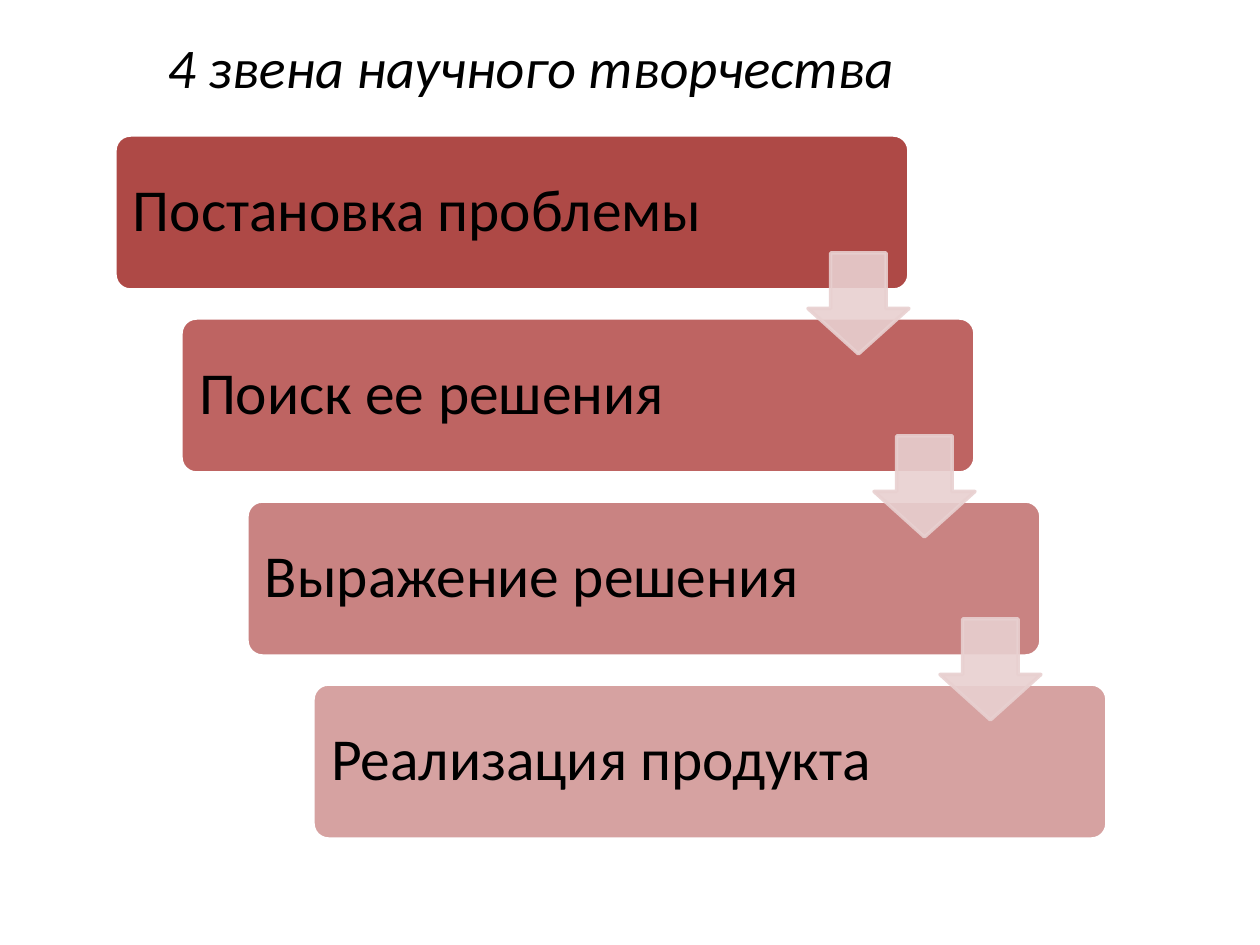
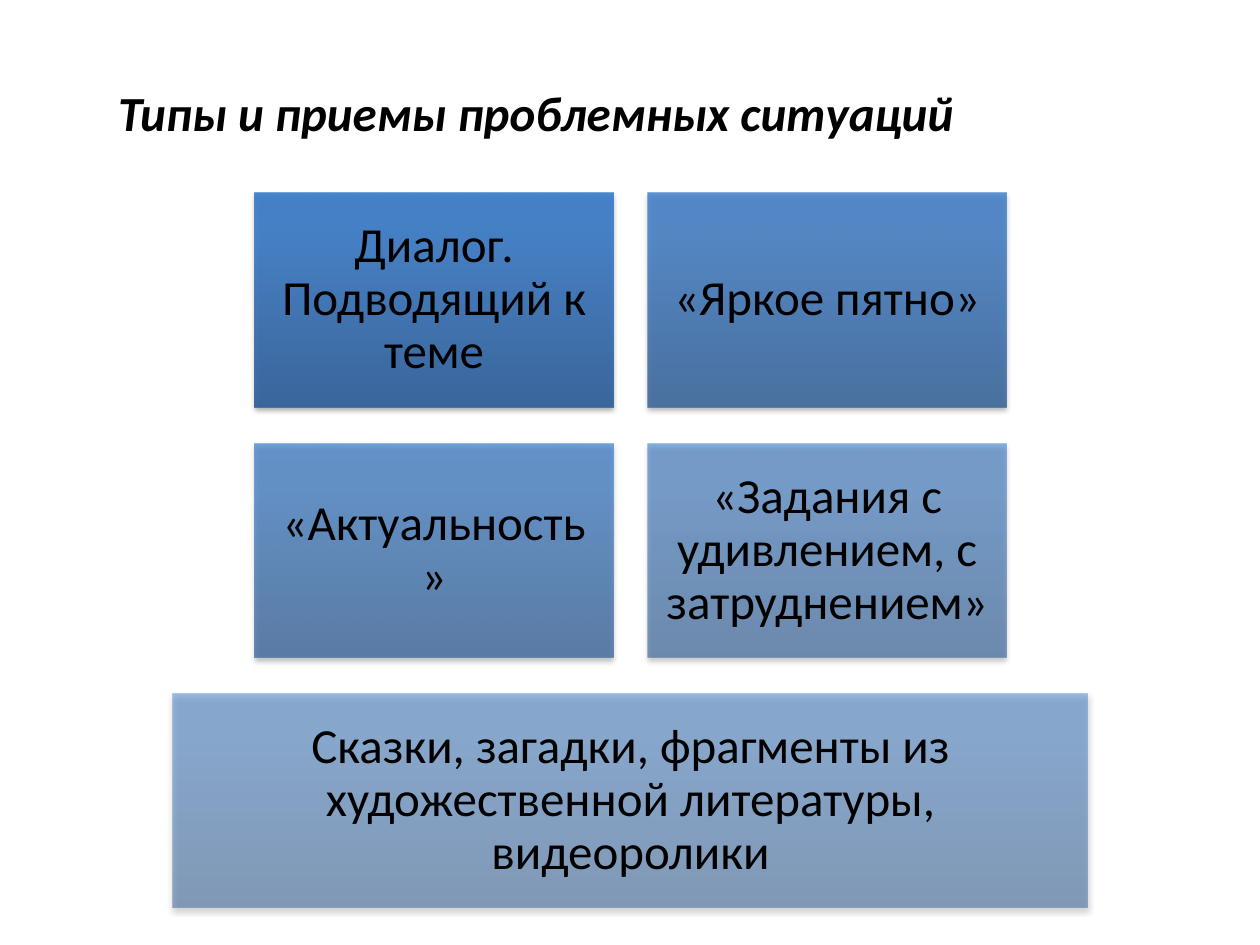
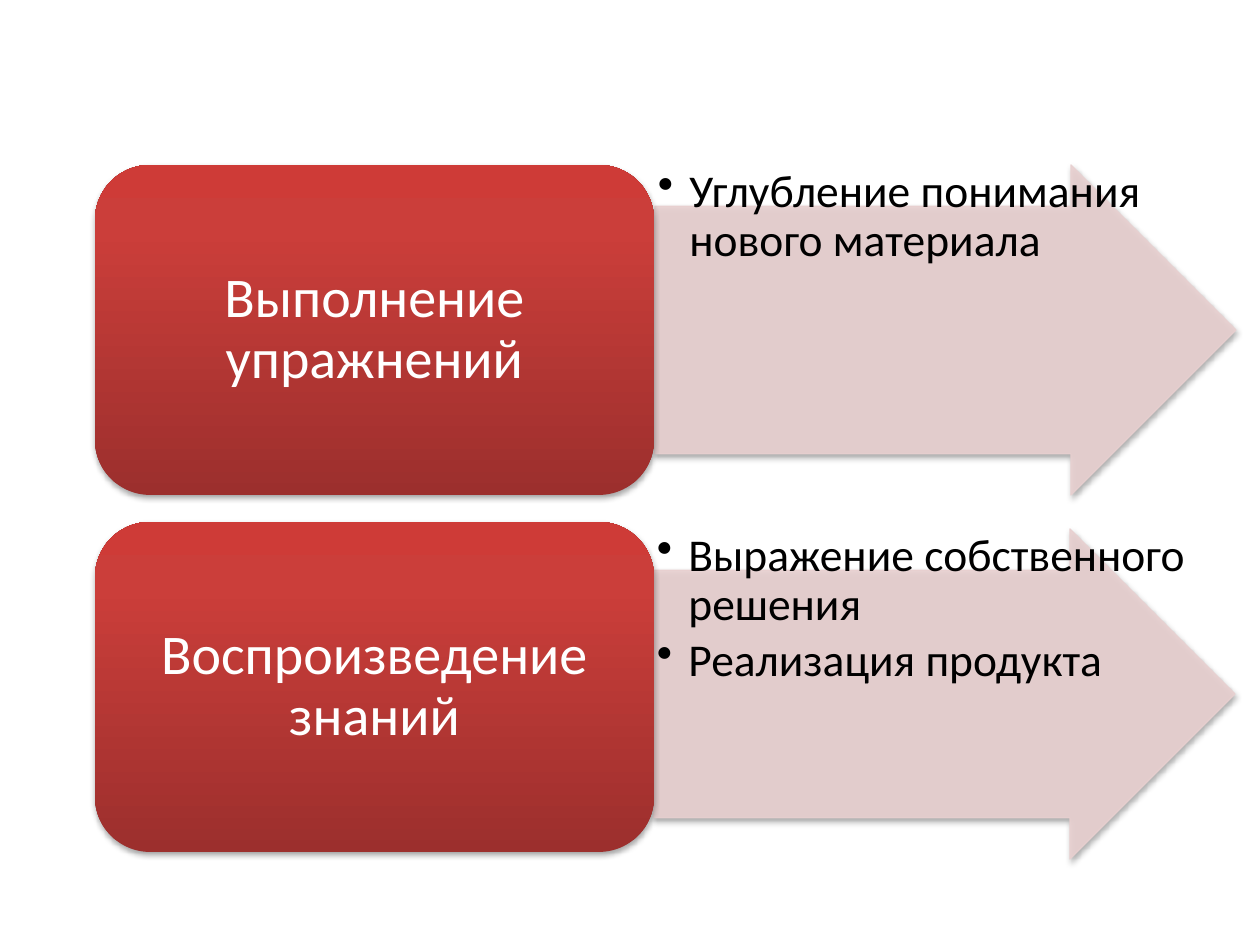
from dataclasses import dataclass

import lxml.etree
import pptx
import pptx.dml.color
import pptx.enum.shapes
import pptx.enum.text
import pptx.oxml.ns
import pptx.util

EMU_PER_PX = 914400 / 126
FONT = "Calibri"
COLORS = {
    "black": "000000",
    "white": "FFFFFF",
    "arrow": "E8D0D0",
    "blue": "2F5F99 3D7CC7 3A7CCB",
    "red": "9C2F2D CB3E3A CE3B37",
}
STEP_FILLS = ["AE4946", "BE6462", "C98382", "D6A2A1"]
STOPS = [0, 80, 100]
SHAPE = pptx.enum.shapes.MSO_SHAPE
ALIGN = pptx.enum.text.PP_ALIGN
ANCHOR = pptx.enum.text.MSO_ANCHOR
qn = pptx.oxml.ns.qn


@dataclass(frozen=True)
class Box:
    x: int
    y: int
    w: int
    h: int

    def emu(self) -> list[int]:
        return [px(v) for v in (self.x, self.y, self.w, self.h)]


@dataclass(frozen=True)
class TextStyle:
    size: int
    color: str = COLORS["black"]
    align: ALIGN = ALIGN.LEFT
    anchor: ANCHOR = ANCHOR.MIDDLE
    inset_x: int = 13
    inset_y: int = 6
    line: float = 0.9
    after: float = 0.35
    bold: bool = False
    italic: bool = False
    bullet: bool = False


@dataclass(frozen=True)
class Tile:
    text: str
    box: Box
    alpha: int


@dataclass(frozen=True)
class Stage:
    name: str
    results: list[str]
    box: Box
    arrow: Box


STEP_TEXT = TextStyle(34, inset_x=18, inset_y=18)
TILE_TEXT = TextStyle(28, align=ALIGN.CENTER, inset_x=15, inset_y=15)
STAGE_TEXT = TextStyle(32, COLORS["white"], ALIGN.CENTER, inset_x=16, inset_y=9)
RESULT_TEXT = TextStyle(26, anchor=ANCHOR.TOP, inset_x=3, inset_y=3, after=0.15, bullet=True)


def px(value: int) -> int:
    return round(value * EMU_PER_PX)


def rgb(color: str) -> pptx.dml.color.RGBColor:
    return pptx.dml.color.RGBColor.from_string(color)


def add_child(parent, tag: str, **attrs):
    return lxml.etree.SubElement(parent, qn(tag), {k: str(v) for k, v in attrs.items()})


def add_text(s, box: Box, lines: list[str], style: TextStyle) -> None:
    tf = s.shapes.add_textbox(*box.emu()).text_frame
    tf.word_wrap = True
    tf.vertical_anchor = style.anchor
    tf.margin_left = tf.margin_right = px(style.inset_x)
    tf.margin_top = tf.margin_bottom = px(style.inset_y)
    tf.text = "\n".join(lines)
    for p in tf.paragraphs:
        if style.bullet:
            pPr = p._p.get_or_add_pPr()
            pPr.set("marL", "228600")
            pPr.set("indent", "-228600")
            add_child(pPr, "a:buChar", char="•")
            p.level = 1
        p.alignment = style.align
        p.line_spacing = style.line
        p.space_after = pptx.util.Pt(round(style.size * style.after))
        for r in p.runs:
            r.font.name = FONT
            r.font.size = pptx.util.Pt(style.size)
            r.font.color.rgb = rgb(style.color)
            r.font.bold = style.bold
            r.font.italic = style.italic


def add_title(s, box: Box, text: str, size: int, align: ALIGN, bold: bool) -> None:
    style = TextStyle(size, align=align, anchor=ANCHOR.TOP, line=1.0, after=0, bold=bold, italic=True)
    add_text(s, box, [text], style)


def add_block(s, kind: SHAPE, box: Box, fill: str, alpha: int = 100, line: str = "",
              width: float = 0, adj: tuple[float, ...] = (), shadow: bool = False) -> None:
    sp = s.shapes.add_shape(kind, *box.emu())
    for i, value in enumerate(adj):
        sp.adjustments[i] = value
    colors = fill.split()
    if len(colors) > 1:
        sp.fill.gradient()
        sp.fill.gradient_angle = 90
        stops = sp._element.spPr.find(".//" + qn("a:gsLst"))
        stops[:] = []
        for pos, color in zip(STOPS, colors):
            add_child(add_child(stops, "a:gs", pos=pos * 1000), "a:srgbClr", val=color)
    else:
        sp.fill.solid()
        sp.fill.fore_color.rgb = rgb(fill)
    if line:
        sp.line.color.rgb = rgb(line)
        sp.line.width = pptx.util.Pt(width)
    else:
        sp.line.fill.background()
    if alpha < 100:
        for color in sp._element.spPr.iter(qn("a:srgbClr")):
            add_child(color, "a:alpha", val=alpha * 1000)
    sp.shadow.inherit = False
    if shadow:
        effects = sp._element.spPr.find(qn("a:effectLst"))
        outer = add_child(effects, "a:outerShdw", blurRad=40000, dist=23000, dir=5400000, rotWithShape=0)
        add_child(add_child(outer, "a:srgbClr", val=COLORS["black"]), "a:alpha", val=35000)


def build_steps(s) -> None:
    names = ["Постановка проблемы", "Поиск ее решения", "Выражение решения", "Реализация продукта"]
    bars = [Box(115 + 66 * i, 135 + 183 * i, 794, 155) for i in range(len(names))]
    for name, bar, fill in zip(names, bars, STEP_FILLS):
        add_block(s, SHAPE.ROUNDED_RECTANGLE, bar, fill, line=COLORS["white"], width=2, adj=(0.1,))
        add_text(s, Box(bar.x, bar.y, 626, bar.h), [name], STEP_TEXT)
    for bar in bars[:-1]:
        add_block(s, SHAPE.DOWN_ARROW, Box(bar.x + 693, bar.y + 118, 101, 101), COLORS["arrow"],
                  90, COLORS["arrow"], 2, (0.55, 0.45))
    add_title(s, Box(144, 26, 774, 81), "4 звена научного творчества", 32, ALIGN.CENTER, False)


def build_tiles(s) -> None:
    add_title(s, Box(105, 76, 903, 72), "Типы и приемы проблемных ситуаций", 28, ALIGN.LEFT, True)
    texts = ["Диалог. Подводящий к теме", "«Яркое пятно»", "«Актуальность»",
             "«Задания с удивлением, с затруднением»"]
    tiles = [Tile(text, Box(255 + 393 * (i % 2), 193 + 251 * (i // 2), 358, 214), 90 - 10 * i)
             for i, text in enumerate(texts)]
    tiles.append(Tile("Сказки, загадки, фрагменты из художественной литературы, видеоролики",
                      Box(173, 694, 915, 214), 50))
    for tile in tiles:
        add_block(s, SHAPE.RECTANGLE, tile.box, COLORS["blue"], tile.alpha, shadow=True)
        add_text(s, tile.box, [tile.text], TILE_TEXT)


def build_stages(s) -> None:
    stages = [
        Stage("Выполнение упражнений", ["Углубление понимания нового материала"],
              Box(95, 165, 559, 330), Box(655, 165, 581, 330)),
        Stage("Воспроизведение знаний", ["Выражение собственного решения", "Реализация продукта"],
              Box(95, 522, 559, 330), Box(654, 529, 581, 330)),
    ]
    for stage in stages:
        add_block(s, SHAPE.RIGHT_ARROW, stage.arrow, COLORS["arrow"], 90, COLORS["arrow"], 0.75,
                  (0.75, 0.5), True)
        add_text(s, stage.arrow, stage.results, RESULT_TEXT)
        add_block(s, SHAPE.ROUNDED_RECTANGLE, stage.box, COLORS["red"], shadow=True)
        add_text(s, stage.box, [stage.name], STAGE_TEXT)


def main() -> None:
    prs = pptx.Presentation()
    prs.slide_width, prs.slide_height = px(1260), px(945)
    for build in (build_steps, build_tiles, build_stages):
        build(prs.slides.add_slide(prs.slide_layouts[6]))
    prs.save("out.pptx")


if __name__ == "__main__":
    main()
